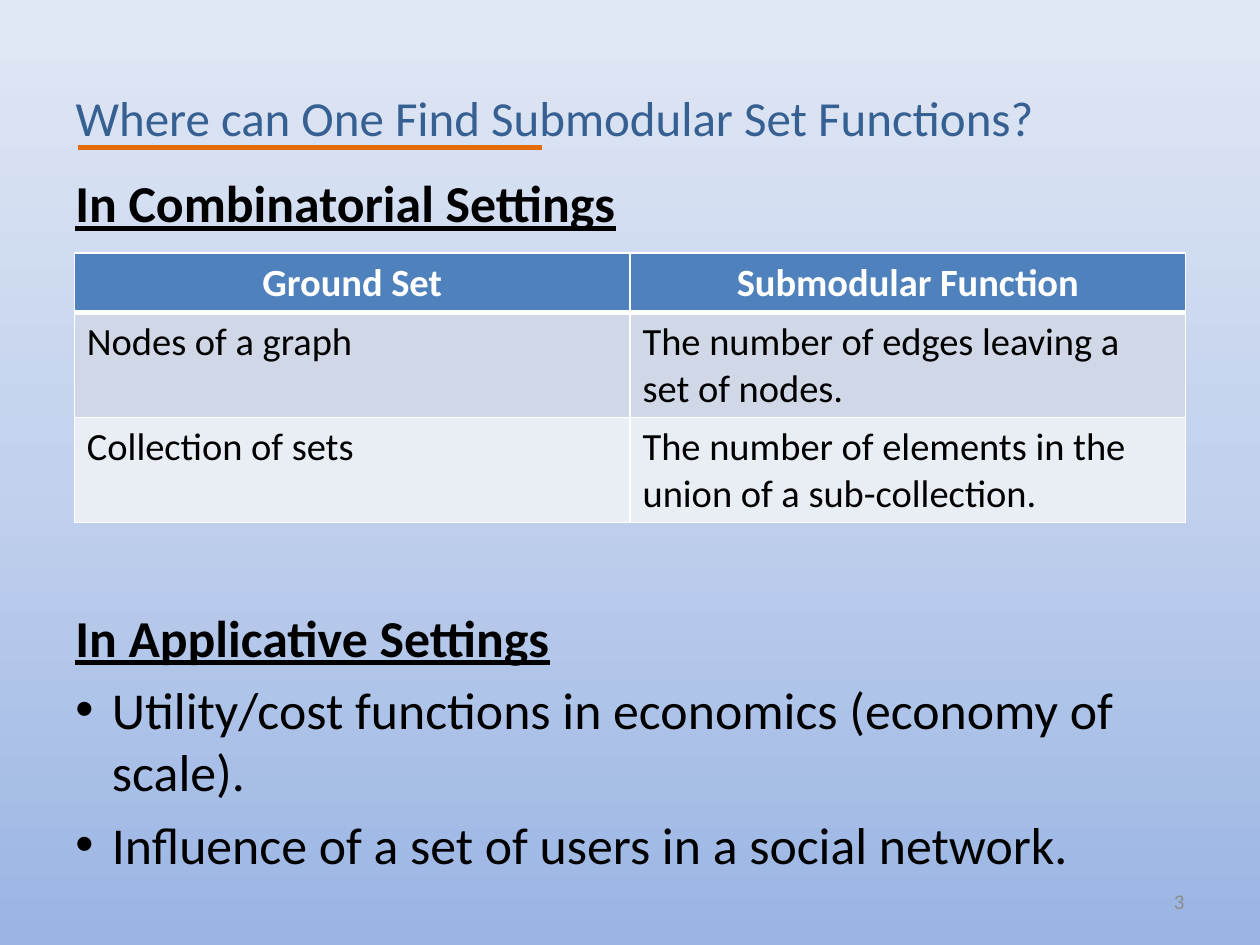
from copy import deepcopy
from dataclasses import dataclass

from lxml import etree
from pptx import Presentation
from pptx.dml.color import RGBColor
from pptx.enum.shapes import MSO_CONNECTOR
from pptx.enum.text import MSO_ANCHOR, PP_ALIGN
from pptx.oxml.ns import qn
from pptx.util import Inches, Pt

LEFT, CENTER, RIGHT = PP_ALIGN.LEFT, PP_ALIGN.CENTER, PP_ALIGN.RIGHT
MIDDLE, TOP = MSO_ANCHOR.MIDDLE, MSO_ANCHOR.TOP
STRAIGHT = MSO_CONNECTOR.STRAIGHT

FONT = "Calibri"
BLACK = RGBColor(0x00, 0x00, 0x00)
WHITE = RGBColor(0xFF, 0xFF, 0xFF)
GRAY = RGBColor(0x8C, 0x8C, 0x8C)
TITLE_BLUE = RGBColor(0x37, 0x60, 0x92)
ORANGE = RGBColor(0xE4, 0x6C, 0x0A)
HEADER_FILL = RGBColor(0x4F, 0x81, 0xBD)
ROW_FILLS = (RGBColor(0xD0, 0xD8, 0xE8), RGBColor(0xE9, 0xED, 0xF4))
BACKGROUND_STOPS = (
    (0, RGBColor(0x9A, 0xB5, 0xE4)),
    (0.5, RGBColor(0xC2, 0xD1, 0xED)),
    (1, RGBColor(0xE1, 0xE8, 0xF5)),
)


@dataclass
class BodyLine:
    text: str
    heading: bool = False
    space_before: float = 5.9


BODY_LINES = (
    BodyLine("In Combinatorial Settings", heading=True),
    # The wide gap leaves room for the table
    BodyLine("In Applicative Settings", heading=True, space_before=212.5),
    BodyLine("Utility/cost functions in economics (economy of scale)."),
    BodyLine("Influence of a set of users in a social network."),
)
TABLE_ROWS = (
    ("Ground Set", "Submodular Function"),
    ("Nodes of a graph", "The number of edges leaving a set of nodes."),
    ("Collection of sets", "The number of elements in the union of a sub-collection."),
)
ROW_HEIGHTS = (0.47, 0.83, 0.83)
COLUMN_WIDTH = 4.41


def write(paragraph, text: str, *, size: float, color=BLACK, bold=False,
          underline=False, align=LEFT, space_before: float = 0) -> None:
    paragraph.alignment = align
    paragraph.space_before = Pt(space_before)
    run = paragraph.add_run()
    run.text = text
    font = run.font
    font.name, font.size = FONT, Pt(size)
    font.bold, font.underline = bold, underline
    font.color.rgb = color


def add_bullet(paragraph) -> None:
    properties = paragraph._p.get_or_add_pPr()
    properties.set("marL", str(Inches(0.29)))
    properties.set("indent", str(Inches(-0.29)))
    font = etree.SubElement(properties, qn("a:buFont"))
    font.set("typeface", "Arial")
    etree.SubElement(properties, qn("a:buChar")).set("char", "•")


def add_text_frame(slide, left: float, top: float, width: float, height: float, anchor):
    shape = slide.shapes.add_textbox(Inches(left), Inches(top), Inches(width), Inches(height))
    frame = shape.text_frame
    frame.word_wrap = True
    frame.vertical_anchor = anchor
    return frame


def fill_background(slide) -> None:
    fill = slide.background.fill
    fill.gradient()
    fill.gradient_angle = 90
    stop_list = next(slide.element.iter(qn("a:gsLst")))
    stop_list.append(deepcopy(stop_list[0]))
    for stop, (position, color) in zip(fill.gradient_stops, BACKGROUND_STOPS):
        stop.position = position
        stop.color.rgb = color


def add_title(slide) -> None:
    title = slide.shapes.title
    title.left, title.top = Inches(0.5), Inches(0.3)
    title.width, title.height = Inches(9), Inches(1.25)
    title.text_frame.vertical_anchor = MIDDLE
    write(title.text_frame.paragraphs[0], "Where can One Find Submodular Set Functions?",
          size=28, color=TITLE_BLUE)

    # Accent line under the title
    line = slide.shapes.add_connector(STRAIGHT, Inches(0.62), Inches(1.17),
                                      Inches(4.3), Inches(1.17))
    line.line.color.rgb = ORANGE
    line.line.width = Pt(3)
    etree.SubElement(line._element.spPr, qn("a:effectLst"))


def add_body(slide) -> None:
    frame = add_text_frame(slide, 0.5, 1.31, 9, 5.43, TOP)
    for index, line in enumerate(BODY_LINES):
        paragraph = frame.add_paragraph() if index else frame.paragraphs[0]
        write(paragraph, line.text, size=29.6, bold=line.heading,
              underline=line.heading, space_before=line.space_before)
        if not line.heading:
            add_bullet(paragraph)


def set_borders(cell, bottom: float) -> None:
    properties = cell._tc.get_or_add_tcPr()
    sides = (("a:lnL", 1), ("a:lnR", 1), ("a:lnT", 1), ("a:lnB", bottom))
    for position, (tag, width) in enumerate(sides):
        border = etree.Element(qn(tag), w=str(Pt(width)))
        solid = etree.SubElement(border, qn("a:solidFill"))
        etree.SubElement(solid, qn("a:srgbClr")).set("val", str(WHITE))
        properties.insert(position, border)


def add_settings_table(slide) -> None:
    columns = len(TABLE_ROWS[0])
    table = slide.shapes.add_table(
        len(TABLE_ROWS), columns, Inches(0.59), Inches(2.01),
        Inches(COLUMN_WIDTH * columns), Inches(sum(ROW_HEIGHTS))).table
    for column in table.columns:
        column.width = Inches(COLUMN_WIDTH)
    for row_index, texts in enumerate(TABLE_ROWS):
        header = row_index == 0
        table.rows[row_index].height = Inches(ROW_HEIGHTS[row_index])
        for column_index, text in enumerate(texts):
            cell = table.cell(row_index, column_index)
            cell.fill.solid()
            cell.fill.fore_color.rgb = HEADER_FILL if header else ROW_FILLS[row_index - 1]
            # The heavy rule below the header is shared with the first row
            set_borders(cell, bottom=3 if header else 1)
            if row_index == 1:
                cell._tc.tcPr.find(qn("a:lnT")).set("w", str(Pt(3)))
            write(cell.text_frame.paragraphs[0], text, size=22, bold=header,
                  color=WHITE if header else BLACK, align=CENTER if header else LEFT)


def main() -> None:
    presentation = Presentation()
    presentation.slide_width, presentation.slide_height = Inches(10), Inches(7.5)
    slide = presentation.slides.add_slide(presentation.slide_layouts[5])

    fill_background(slide)
    add_title(slide)
    add_body(slide)

    # Slide number
    number = add_text_frame(slide, 7.17, 6.95, 2.33, 0.4, MIDDLE)
    write(number.paragraphs[0], "3", size=12, color=GRAY, align=RIGHT)

    add_settings_table(slide)
    presentation.save("out.pptx")


if __name__ == "__main__":
    main()
